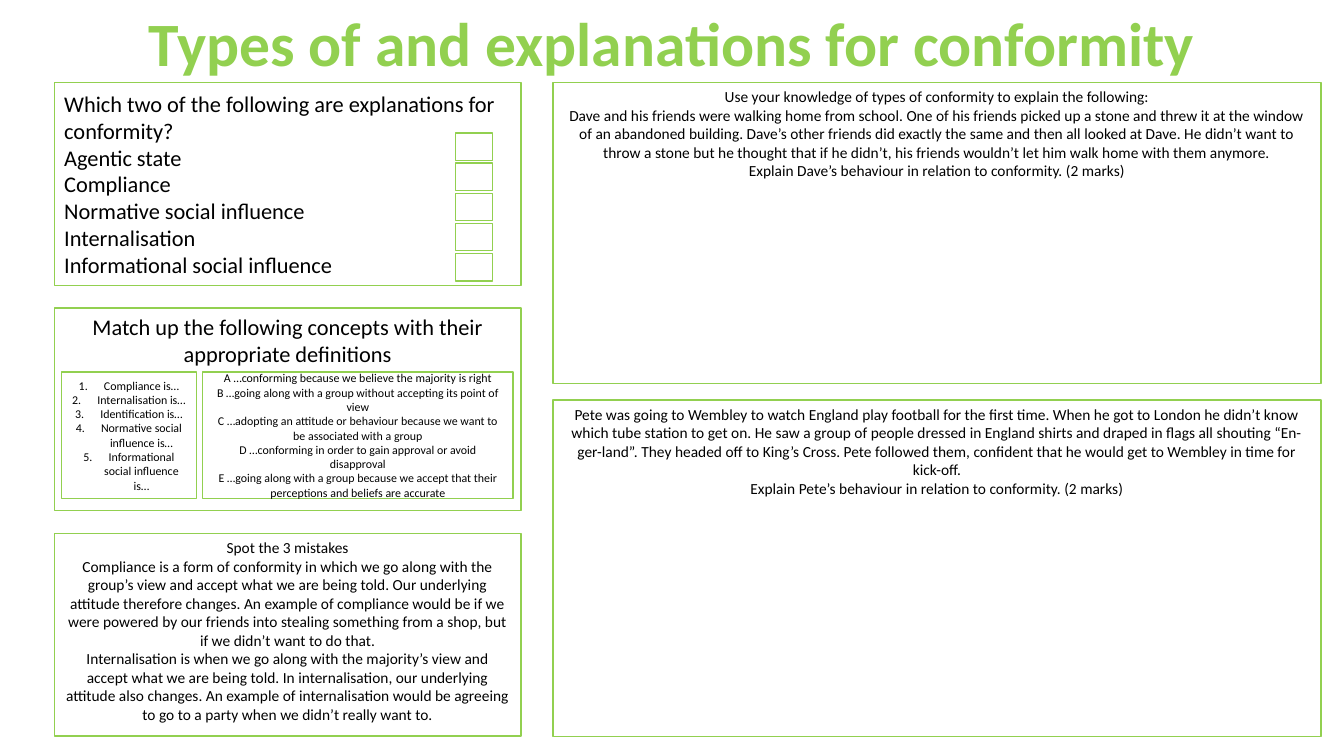
from pptx import Presentation
from pptx.dml.color import RGBColor
from pptx.enum.shapes import MSO_SHAPE
from pptx.enum.text import MSO_ANCHOR, MSO_AUTO_SIZE, PP_ALIGN
from pptx.oxml.xmlchemy import OxmlElement
from pptx.util import Cm, Pt

GREEN = RGBColor(0x92, 0xD0, 0x50)
WHITE = RGBColor(0xFF, 0xFF, 0xFF)
BLACK = RGBColor(0x00, 0x00, 0x00)

SLIDE_WIDTH, SLIDE_HEIGHT = 33.87, 19.05
PANEL_TOP = 2.08
LEFT_PANEL = {"left": 1.37, "width": 11.76, "height": 5.11}
LEFT_PANEL_PITCH = 5.68
RIGHT_PANEL = {"left": 13.94, "width": 19.35}
MATCH_BOX = {"top": 9.37, "height": 3.2}
CHECKBOX_TOP, CHECKBOX_PITCH = 3.35, 0.76

TITLE = "Types of and explanations for conformity"
QUESTION = "Which two of the following are explanations for conformity?"
ANSWERS = [
    "Agentic state",
    "Compliance",
    "Normative social influence",
    "Internalisation",
    "Informational social influence",
]
MATCH_TASK = "Match up the following concepts with their appropriate definitions"
CONCEPTS = [
    "Compliance is…",
    "Internalisation is…",
    "Identification is…",
    "Normative social influence is…",
    "Informational social influence is…",
]
DEFINITIONS = [
    "A …conforming because we believe the majority is right",
    "B …going along with a group without accepting its point of view",
    "C …adopting an attitude or behaviour because we want to be associated with a group",
    "D …conforming in order to gain approval or avoid disapproval",
    "E …going along with a group because we accept that their perceptions and beliefs are accurate",
]
MISTAKES = [
    "Spot the 3 mistakes",
    "Compliance is a form of conformity in which we go along with the group’s view and accept "
    "what we are being told. Our underlying attitude therefore changes. An example of compliance "
    "would be if we were powered by our friends into stealing something from a shop, but if we "
    "didn’t want to do that.",
    "Internalisation is when we go along with the majority’s view and accept what we are being "
    "told. In internalisation, our underlying attitude also changes. An example of "
    "internalisation would be agreeing to go to a party when we didn’t really want to.",
]
DAVE = [
    "Use your knowledge of types of conformity to explain the following:",
    "Dave and his friends were walking home from school. One of his friends picked up a stone "
    "and threw it at the window of an abandoned building. Dave’s other friends did exactly the "
    "same and then all looked at Dave. He didn’t want to throw a stone but he thought that if he "
    "didn’t, his friends wouldn’t let him walk home with them anymore.",
    "Explain Dave’s behaviour in relation to conformity. (2 marks)",
]
PETE = [
    "Pete was going to Wembley to watch England play football for the first time. When he got to "
    "London he didn’t know which tube station to get on. He saw a group of people dressed in "
    "England shirts and draped in flags all shouting “En-ger-land”. They headed off to King’s "
    "Cross. Pete followed them, confident that he would get to Wembley in time for kick-off.",
    "Explain Pete’s behaviour in relation to conformity. (2 marks)",
]


def number_paragraph(paragraph):
    """Give the paragraph an automatic number with a hanging indent."""
    properties = paragraph._p.get_or_add_pPr()
    properties.set("marL", str(Cm(0.635)))
    properties.set("indent", str(Cm(-0.635)))
    numbering = OxmlElement("a:buAutoNum")
    numbering.set("type", "arabicPeriod")
    properties.append(numbering)


def write_text(shape, lines, size=11, color=BLACK, bold=False, align=PP_ALIGN.CENTER,
               anchor=MSO_ANCHOR.TOP, numbered=False):
    frame = shape.text_frame
    frame.word_wrap = True
    frame.vertical_anchor = anchor
    frame.text = "\n".join(lines)
    for paragraph in frame.paragraphs:
        paragraph.alignment = align
        font = paragraph.runs[0].font
        font.name, font.size, font.bold = "Calibri", Pt(size), bold
        font.color.rgb = color
        if numbered:
            number_paragraph(paragraph)


def add_box(slide, left, top, width, height):
    shape = slide.shapes.add_shape(
        MSO_SHAPE.RECTANGLE, Cm(left), Cm(top), Cm(width), Cm(height))
    shape.shadow.inherit = False
    shape.fill.solid()
    shape.fill.fore_color.rgb = WHITE
    shape.line.color.rgb = GREEN
    shape.line.width = Pt(1)
    return shape


def add_title(slide):
    title = slide.shapes.add_textbox(0, 0, Cm(SLIDE_WIDTH), Cm(2.13))
    write_text(title, [TITLE], size=44, color=GREEN, bold=True)
    title.text_frame.auto_size = MSO_AUTO_SIZE.SHAPE_TO_FIT_TEXT


def add_left_panels(slide):
    question, matching, mistakes = [
        add_box(slide, top=PANEL_TOP + row * LEFT_PANEL_PITCH, **LEFT_PANEL)
        for row in range(3)
    ]
    write_text(question, [QUESTION, *ANSWERS], size=16,
               align=PP_ALIGN.LEFT, anchor=MSO_ANCHOR.MIDDLE)
    write_text(matching, [MATCH_TASK], size=16)
    write_text(mistakes, MISTAKES)


def add_checkboxes(slide):
    for row in range(len(ANSWERS)):
        add_box(slide, 11.48, CHECKBOX_TOP + row * CHECKBOX_PITCH, 0.94, 0.69)


def add_match_boxes(slide):
    concepts = add_box(slide, left=1.55, width=3.4, **MATCH_BOX)
    write_text(concepts, CONCEPTS, size=8.5, anchor=MSO_ANCHOR.MIDDLE, numbered=True)
    definitions = add_box(slide, left=5.11, width=7.82, **MATCH_BOX)
    write_text(definitions, DEFINITIONS, size=8.5, anchor=MSO_ANCHOR.MIDDLE)


def add_scenarios(slide):
    for lines, top, height in [(DAVE, PANEL_TOP, 7.59), (PETE, 10.08, 8.48)]:
        write_text(add_box(slide, top=top, height=height, **RIGHT_PANEL), lines)


def main():
    presentation = Presentation()
    presentation.slide_width = Cm(SLIDE_WIDTH)
    presentation.slide_height = Cm(SLIDE_HEIGHT)
    slide = presentation.slides.add_slide(presentation.slide_layouts[6])
    add_left_panels(slide)
    add_scenarios(slide)
    add_checkboxes(slide)
    add_match_boxes(slide)
    add_title(slide)
    presentation.save("out.pptx")


if __name__ == "__main__":
    main()
